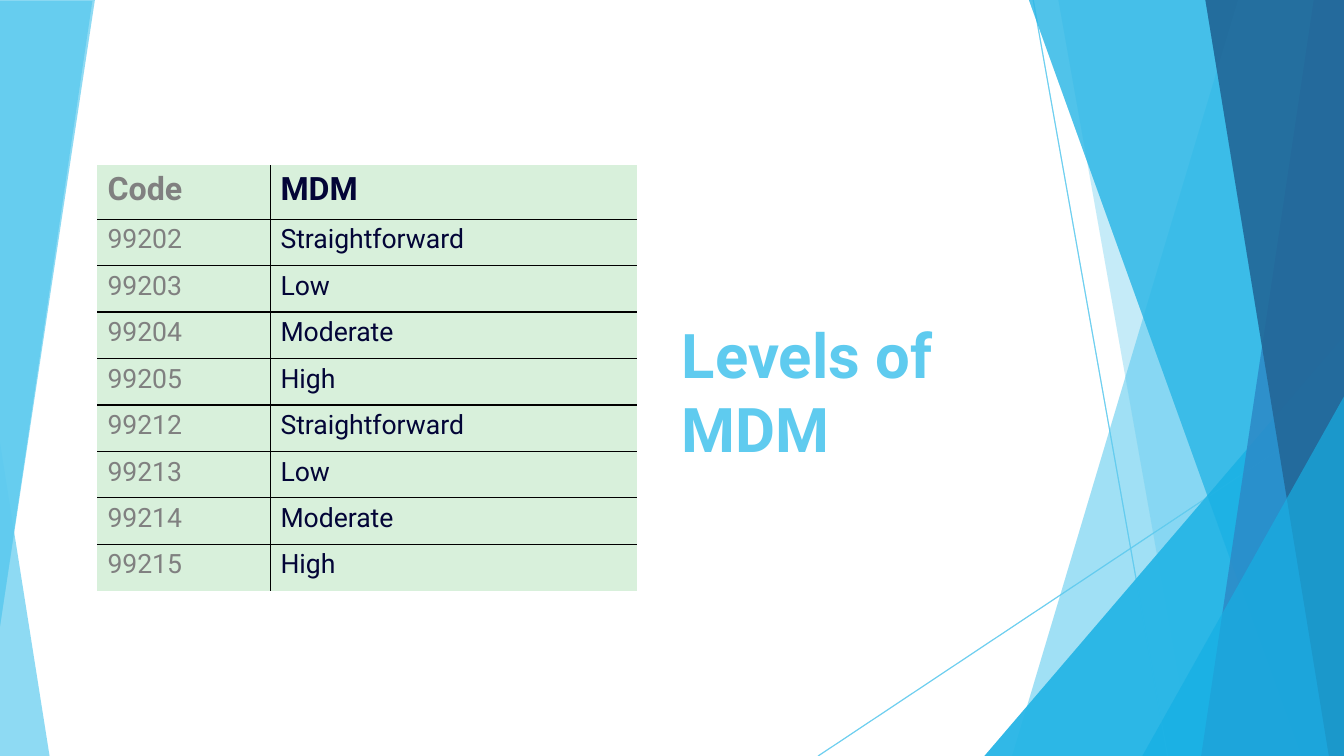
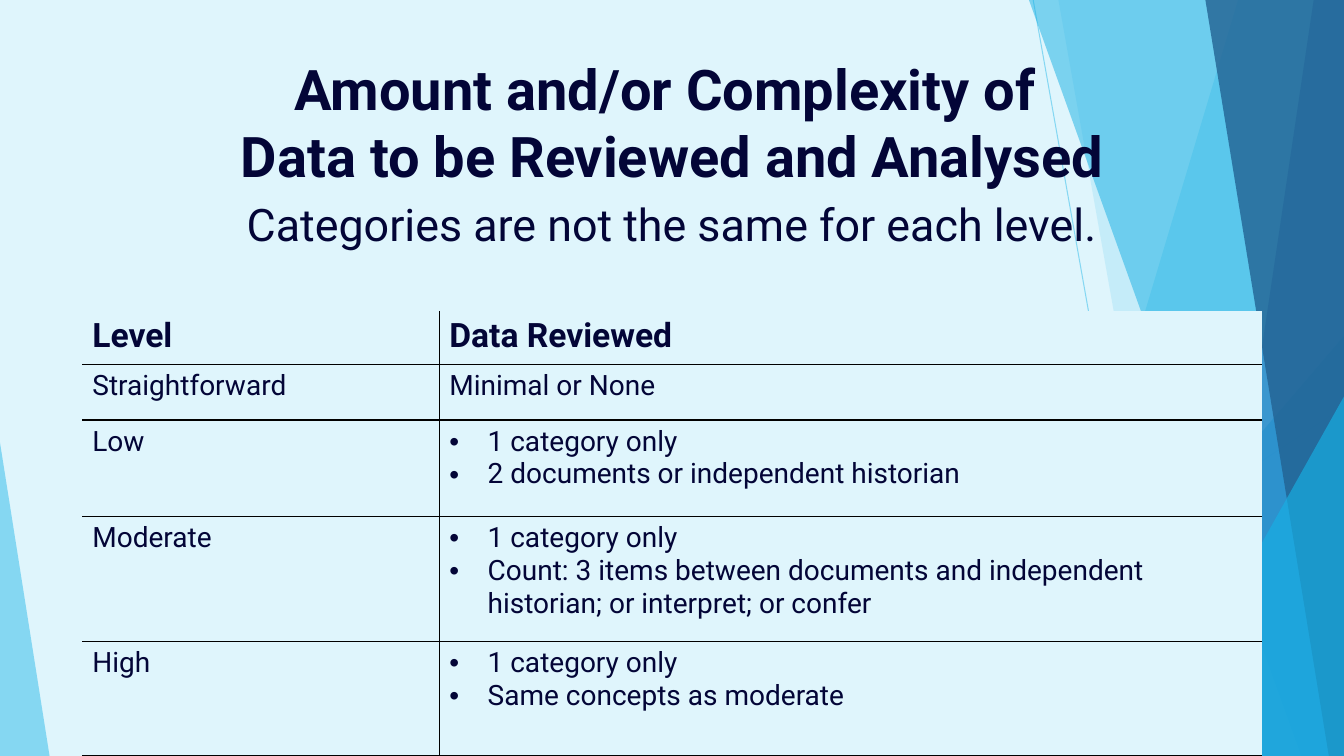
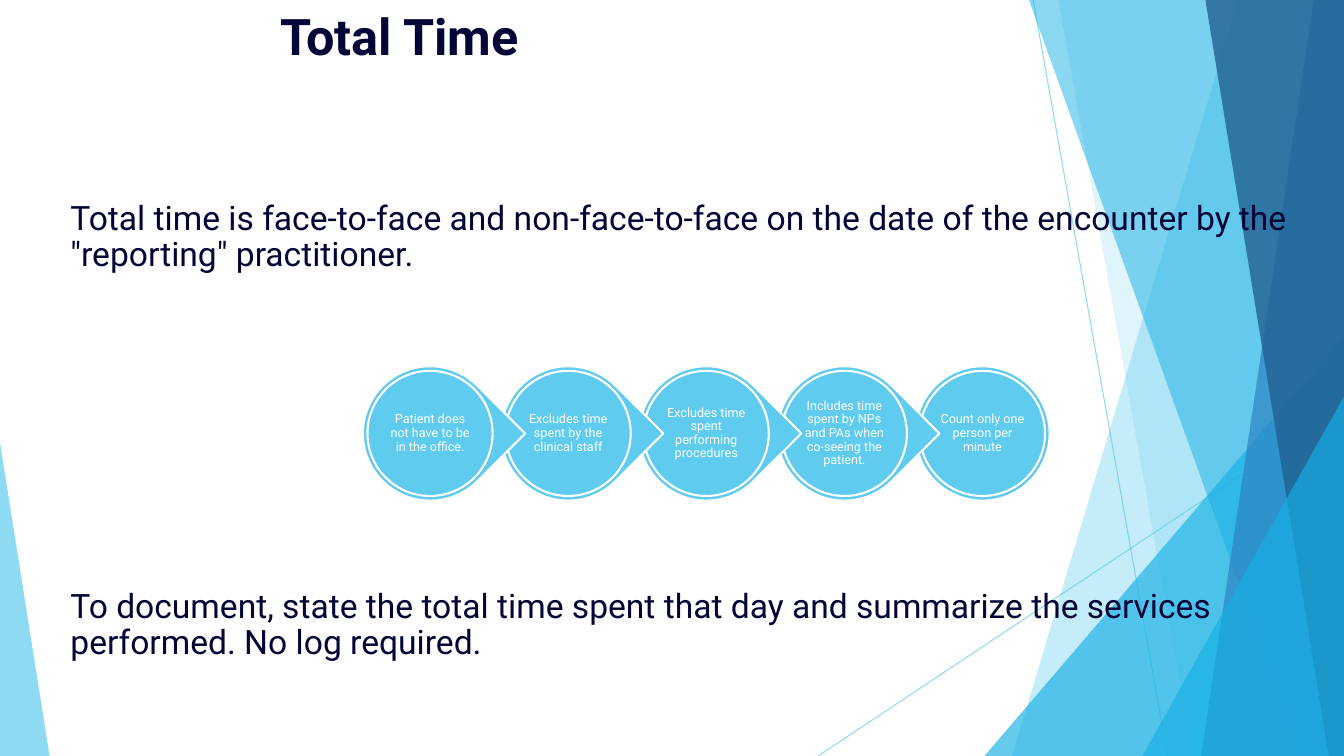
from lxml.etree import SubElement
from pptx import Presentation
from pptx.dml.color import RGBColor
from pptx.enum.shapes import MSO_CONNECTOR, MSO_SHAPE as SHAPE
from pptx.enum.text import MSO_ANCHOR as ANCHOR, PP_ALIGN as ALIGN
from pptx.oxml.ns import qn
from pptx.util import Inches, Pt

# Grid: 160 columns by 90 rows, each a twelfth of an inch
COLUMNS, ROWS = 160, 90
FULL = (0, 0, COLUMNS, ROWS)

SKY, CYAN, BLUE, DEEP = "5FCBEF", "17B0E4", "2E83C3", "226292"
WHITE, PALE, MINT = "FFFFFF", "DFF5FC", "D8F0DB"
NAVY, GREY, BLACK = "030537", "808080", "000000"
NO_STYLE = "{2D5ABB26-0587-4C30-8999-92F81FD0307C}"

TITLE = {"name": "Roboto", "bold": True, "color": NAVY}
BODY = {"name": "Roboto", "bold": False, "color": NAVY}


def grid(*units):
    return [Inches(unit / 12) for unit in units]


def paint(fill, color, alpha=None):
    fill.solid()
    fill.fore_color.rgb = RGBColor.from_string(color)
    if alpha is not None:
        # Opacity in percent
        for element in fill._xPr.iter(qn("a:srgbClr")):
            SubElement(element, qn("a:alpha"), val=str(alpha * 1000))


def finish(shape, color, alpha=None, outline=None):
    shape.shadow.inherit = False
    paint(shape.fill, color, alpha)
    if outline:
        paint(shape.line.fill, outline)
        shape.line.width = Pt(1.5)
    else:
        shape.line.fill.background()
    return shape


def add_preset(slide, kind, box, color, alpha=None, outline=None, adjust=None):
    shape = finish(slide.shapes.add_shape(kind, *grid(*box)), color, alpha, outline)
    if adjust is not None:
        shape.adjustments[0] = adjust
    return shape


def add_polygon(slide, points, color, alpha):
    start, *others = [grid(*point) for point in points]
    builder = slide.shapes.build_freeform(*start, scale=1.0)
    builder.add_line_segments(others, close=True)
    finish(builder.convert_to_shape(), color, alpha)


def add_thin_line(slide, start, end):
    line = slide.shapes.add_connector(MSO_CONNECTOR.STRAIGHT, *grid(*start, *end))
    paint(line.line.fill, SKY, 70)
    line.line.width = Pt(0.75)
    SubElement(line._element.spPr, qn("a:effectLst"))


def write(frame, lines, style, paragraph_format=None, bullets=False):
    frame.text = "\n".join(lines)
    for paragraph in frame.paragraphs:
        if bullets:
            properties = paragraph._p.get_or_add_pPr()
            properties.set("marL", str(Inches(0.38)))
            properties.set("indent", str(-Inches(0.38)))
            SubElement(properties, qn("a:buFont"), typeface="Arial")
            SubElement(properties, qn("a:buChar"), char="•")
        for name, value in (paragraph_format or {}).items():
            setattr(paragraph, name, value)
        for run in paragraph.runs:
            for name, value in style.items():
                if name == "color":
                    paint(run.font.fill, value)
                else:
                    setattr(run.font, name, value)


def add_text(slide, box, text, style, size, anchor=ANCHOR.TOP, inset=None, **paragraph_format):
    frame = slide.shapes.add_textbox(*grid(*box)).text_frame
    frame.word_wrap = True
    frame.vertical_anchor = anchor
    if inset is not None:
        for side in ("left", "top", "right", "bottom"):
            setattr(frame, f"margin_{side}", Inches(inset))
    write(frame, [text], style | {"size": Pt(size)}, paragraph_format)


def add_facets(slide, box):
    """Overlapping glass panels, measured from the right edge of the box."""
    left, top, width, height = box
    right, bottom = left + width, top + height

    def panel(top_inset, bottom_inset, color, alpha):
        points = [(right - top_inset, top), (right, top), (right, bottom),
                  (right - bottom_inset, bottom)]
        add_polygon(slide, points, color, alpha)

    def corner(corner_width, corner_height):
        corner_box = (right - corner_width, bottom - corner_height, corner_width, corner_height)
        add_preset(slide, SHAPE.ISOSCELES_TRIANGLE, corner_box, CYAN, 66, adjust=1)

    add_thin_line(slide, (right - 37, top), (right - 21, bottom))
    add_thin_line(slide, (right, top + 48.4), (right - 62.6, bottom))
    panel(12.6, 39.5, SKY, 36)
    panel(34, 18, SKY, 20)
    corner(42.8, 50)
    panel(37.5, 5.1, CYAN, 50)
    panel(3.6, 17, BLUE, 70)
    panel(16.5, 1.8, DEEP, 80)
    corner(24, 42.8)


def add_slide(presentation, background):
    slide = presentation.slides.add_slide(presentation.slide_layouts[6])
    paint(slide.background.fill, background)
    add_facets(slide, FULL)
    # Wedge at the lower left
    add_preset(slide, SHAPE.ISOSCELES_TRIANGLE, (0, ROWS - 37.3, 5.9, 37.3), SKY, 70, adjust=0)
    return slide


def add_border(cell, *sides):
    for side in sides:
        line = SubElement(cell._tc.get_or_add_tcPr(), qn(f"a:ln{side}"), w=str(Pt(1)))
        fill = SubElement(line, qn("a:solidFill"))
        SubElement(fill, qn("a:srgbClr"), val=BLACK)


def add_ruled_table(slide, corner, columns, rows, content, fill, sizes,
                    first_color=NAVY, closed=False):
    """Two columns with inner rules; a list in a cell becomes bullets."""
    box = (*corner, sum(columns), sum(rows))
    table = slide.shapes.add_table(len(rows), len(columns), *grid(*box)).table
    table.first_row = table.horz_banding = False
    table._tbl.tblPr.find(qn("a:tableStyleId")).text = NO_STYLE
    for parts, lengths, name in ((table.columns, columns, "width"), (table.rows, rows, "height")):
        for part, length in zip(parts, grid(*lengths)):
            setattr(part, name, length)
    for row, texts in enumerate(content):
        for column, text in enumerate(texts):
            cell = table.cell(row, column)
            sides = ["R" if column == 0 else "L"]
            sides += ["T"] if row else []
            sides += ["B"] if closed or row < len(rows) - 1 else []
            add_border(cell, *sides)
            paint(cell.fill, fill)
            style = {"name": "Roboto", "bold": row == 0, "size": Pt(sizes[min(row, 1)]),
                     "color": NAVY if column else first_color}
            bullets = isinstance(text, list)
            write(cell.text_frame, text if bullets else [text], style, bullets=bullets)


def add_circle_chain(slide, box, pitch, labels):
    """Ringed circles pointing right; box holds the first, drawn from last to first."""
    left, top, size, _ = box

    def inner(index, inset):
        return (left + index * pitch + inset, top + inset, size - 2 * inset, size - 2 * inset)

    for index, label in reversed(list(enumerate(labels))):
        if index == len(labels) - 1:
            add_preset(slide, SHAPE.OVAL, inner(index, 0), SKY, outline=WHITE)
        else:
            drop = add_preset(slide, SHAPE.TEAR, inner(index, 0), SKY, outline=WHITE, adjust=1)
            drop.rotation = 45
        add_preset(slide, SHAPE.OVAL, inner(index, 0.55), SKY, outline=WHITE)
        add_text(slide, inner(index, 2.7), label, BODY | {"color": WHITE}, 9, ANCHOR.MIDDLE,
                 inset=0.01, alignment=ALIGN.CENTER, line_spacing=0.9)


def build_levels(presentation):
    slide = add_slide(presentation, WHITE)
    # Left band and a second layer of panels
    add_polygon(slide, [(0, 0), (11.3, 0), (0, 74.6)], SKY, 70)
    add_facets(slide, FULL)
    add_text(slide, (80, 16.6, 45.8, 39.3), "Levels of MDM", TITLE | {"color": SKY}, 44,
             ANCHOR.BOTTOM)
    band = add_preset(slide, SHAPE.ISOSCELES_TRIANGLE, (0, 0.1, 11, 74.4), SKY, 85, adjust=1)
    band.rotation = 180
    # Code table: each code family runs through the same levels
    levels = ["Straightforward", "Low", "Moderate", "High"]
    codes = [(str(first + step), level) for first in (99202, 99212)
             for step, level in enumerate(levels)]
    add_ruled_table(slide, (11.6, 19.7), [20.6, 43.6], [6.4] + [5.53] * len(codes),
                    [("Code", "MDM"), *codes], MINT, (23, 19), first_color=GREY)


def build_data(presentation):
    slide = add_slide(presentation, PALE)
    only = "1 category only"
    content = [
        ("Level", "Data Reviewed"),
        ("Straightforward", "Minimal or None"),
        ("Low", [only, "2 documents or independent historian"]),
        ("Moderate", [only, "Count: 3 items between documents and independent historian; "
                            "or interpret; or confer"]),
        ("High", [only, "Same concepts as moderate"]),
    ]
    add_ruled_table(slide, (9.8, 37), [42.5, 97.9], [6.4, 6.6, 11.5, 14.9, 13.6],
                    content, PALE, (24, 20), closed=True)
    # Title and subtitle
    add_text(slide, (0, 5.9, COLUMNS, 11.3),
             "Amount and/or Complexity of \vData to be Reviewed and Analysed", TITLE, 40,
             alignment=ALIGN.CENTER)
    add_text(slide, (0, 21.4, COLUMNS, 11.3), "Categories are not the same for each level.",
             BODY, 32, ANCHOR.MIDDLE, alignment=ALIGN.CENTER, line_spacing=0.9)


def build_time(presentation):
    slide = add_slide(presentation, WHITE)
    add_text(slide, (32.2, 0, 127.8, 21.4), "Total Time", TITLE, 36)
    add_circle_chain(slide, (43.2, 43.6, 16, 16), 16.44, [
        "Patient does not have to be in the office.",
        "Excludes time spent by the clinical staff",
        "Excludes time spent performing procedures",
        "Includes time spent by NPs and PAs when co-seeing the patient.",
        "Count only one person per minute",
    ])
    # Statements above and below the chain
    statements = {
        21.4: "Total time is face-to-face and non-face-to-face on the date of the encounter "
              'by the "reporting" practitioner.',
        67.6: "To document, state the total time spent that day and summarize the services "
              "performed. No log required.",
    }
    for top, text in statements.items():
        add_text(slide, (7.2, top, 152.8, 13.8), text, BODY, 24, ANCHOR.MIDDLE, line_spacing=0.9)


def main():
    presentation = Presentation()
    presentation.slide_width, presentation.slide_height = grid(COLUMNS, ROWS)
    for build in (build_levels, build_data, build_time):
        build(presentation)
    presentation.save("out.pptx")


if __name__ == "__main__":
    main()
